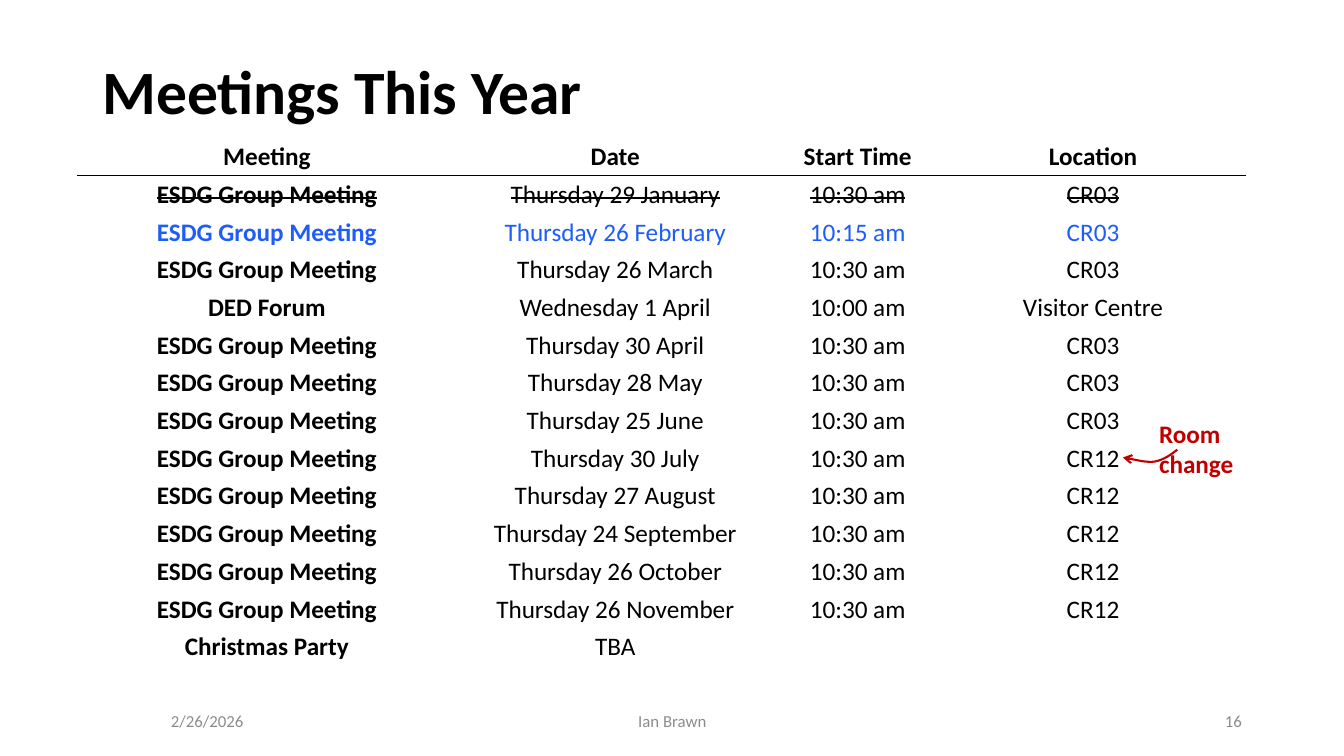
from dataclasses import dataclass

from lxml import etree
from pptx import Presentation
from pptx import util as u
from pptx.dml.color import RGBColor
from pptx.enum import text
from pptx.oxml import ns

Cm = u.Cm
LEFT, CENTRE, RIGHT = text.PP_ALIGN.LEFT, text.PP_ALIGN.CENTER, text.PP_ALIGN.RIGHT


@dataclass(frozen=True)
class Theme:
    font: str = "Calibri"
    ink: str = "000000"
    current: str = "1E5DF8"
    alert: str = "C00000"
    muted: str = "8C8C8C"
    title_size: int = 44
    body_size: int = 18
    footer_size: int = 12


THEME = Theme()
GROUP = "ESDG Group Meeting"
HEADINGS = ("Meeting", "Date", "Start Time", "Location")
MEETINGS = (
    (GROUP, "Thursday 29 January", "10:30 am", "CR03"),
    (GROUP, "Thursday 26 February", "10:15 am", "CR03"),
    (GROUP, "Thursday 26 March", "10:30 am", "CR03"),
    ("DED Forum", "Wednesday 1 April", "10:00 am", "Visitor Centre"),
    (GROUP, "Thursday 30 April", "10:30 am", "CR03"),
    (GROUP, "Thursday 28 May", "10:30 am", "CR03"),
    (GROUP, "Thursday 25 June", "10:30 am", "CR03"),
    (GROUP, "Thursday 30 July", "10:30 am", "CR12"),
    (GROUP, "Thursday 27 August", "10:30 am", "CR12"),
    (GROUP, "Thursday 24 September", "10:30 am", "CR12"),
    (GROUP, "Thursday 26 October", "10:30 am", "CR12"),
    (GROUP, "Thursday 26 November", "10:30 am", "CR12"),
    ("Christmas Party", "TBA", "", ""),
)
PAST_ROW, CURRENT_ROW = 1, 2
COLUMN_WIDTHS = (9.53, 8.03, 4.19, 7.67)
ROW_HEIGHT = 0.95


def add_span(para, words, size, colour, bold=False, align=LEFT):
    para.alignment = align
    span = para.add_run()
    span.text = words
    span.font.name = THEME.font
    span.font.size = u.Pt(size)
    span.font.bold = bold
    span.font.color.rgb = RGBColor.from_string(colour)
    return span


def add_label(page, box, words, size, colour, bold=False, align=LEFT,
              anchor=text.MSO_ANCHOR.MIDDLE):
    frame = page.shapes.add_textbox(*map(Cm, box)).text_frame
    frame.word_wrap = True
    frame.vertical_anchor = anchor
    add_span(frame.paragraphs[0], words, size, colour, bold, align)
    return frame


def add_rule(cell, side):
    """Draw a thin border on one side ("lnT" or "lnB") of a cell."""
    line = etree.Element(ns.qn("a:" + side), w=str(u.Pt(1)))
    fill = etree.SubElement(line, ns.qn("a:solidFill"))
    etree.SubElement(fill, ns.qn("a:srgbClr"), val=THEME.ink)
    cell._tc.get_or_add_tcPr().insert(0, line)


def add_title(page, box):
    frame = add_label(page, box, "Meetings This Year", THEME.title_size, THEME.ink, bold=True)
    frame.paragraphs[0].line_spacing = 0.9


def add_schedule(page, box):
    rows = (HEADINGS, *MEETINGS)
    table = page.shapes.add_table(len(rows), len(HEADINGS), *map(Cm, box)).table
    table.first_row = table.horz_banding = False
    for column, width in zip(table.columns, COLUMN_WIDTHS):
        column.width = Cm(width)
    for row_no, row in enumerate(rows):
        table.rows[row_no].height = Cm(ROW_HEIGHT)
        colour = THEME.current if row_no == CURRENT_ROW else THEME.ink
        for column_no, words in enumerate(row):
            cell = table.cell(row_no, column_no)
            cell.fill.background()
            cell.vertical_anchor = text.MSO_ANCHOR.MIDDLE
            cell.margin_left = cell.margin_right = Cm(0.08)
            cell.margin_top = cell.margin_bottom = Cm(0.08)
            if row_no < 2:
                add_rule(cell, ("lnB", "lnT")[row_no])
            if words:
                span = add_span(cell.text_frame.paragraphs[0], words, THEME.body_size, colour,
                                bold=row_no == 0 or column_no == 0, align=CENTRE)
                if row_no == PAST_ROW:
                    span._r.get_or_add_rPr().set("strike", "sngStrike")


def add_curved_arrow(page, start, curves):
    """Draw an arrow through cubic curves, each given as two controls and an end."""
    builder = page.shapes.build_freeform(*map(Cm, start))
    builder.add_line_segments([tuple(map(Cm, curve[2])) for curve in curves], close=False)
    arrow = builder.convert_to_shape()
    arrow.shadow.inherit = False
    arrow.fill.background()
    arrow.line.color.rgb = RGBColor.from_string(THEME.alert)
    arrow.line.width = u.Pt(1.5)
    segments = list(arrow._element.iter(ns.qn("a:lnTo")))
    for segment, curve in zip(segments, curves):
        segment.tag = ns.qn("a:cubicBezTo")
        for place, (x, y) in enumerate(curve[:2]):
            point = etree.Element(ns.qn("a:pt"), x=str(Cm(x) - arrow.left),
                                  y=str(Cm(y) - arrow.top))
            segment.insert(place, point)
    etree.SubElement(arrow.line._get_or_add_ln(), ns.qn("a:tailEnd"), type="arrow")


def add_room_note(page, box):
    frame = add_label(page, box, "Room change", THEME.body_size, THEME.alert, bold=True,
                      anchor=text.MSO_ANCHOR.TOP)
    frame.margin_right = Cm(1.4)
    left, top = box[:2]

    def place(x, y):
        return left + x, top + y

    add_curved_arrow(page, place(0.71, 0.92), (
        (place(0.55, 1.05), place(0.38, 1.17), place(0.15, 1.22)),
        (place(-0.05, 1.25), place(-0.36, 1.17), place(-0.66, 1.12)),
    ))


def add_footer(page, box):
    left, top, _, height = box
    parts = (
        (0, 5.89, "2/26/2026", LEFT),
        (7.17, 11.43, "Ian Brawn", CENTRE),
        (19.87, 7.62, "16", RIGHT),
    )
    for offset, width, words, align in parts:
        add_label(page, (left + offset, top, width, height), words,
                  THEME.footer_size, THEME.muted, align=align)


def main():
    deck = Presentation()
    deck.slide_width, deck.slide_height = Cm(33.87), Cm(19.05)
    page = deck.slides.add_slide(deck.slide_layouts[6])
    add_title(page, (2.33, 1.02, 29.21, 2.74))
    add_schedule(page, (1.96, 3.48, sum(COLUMN_WIDTHS), ROW_HEIGHT * (len(MEETINGS) + 1)))
    add_room_note(page, (28.96, 10.41, 4.01, 1.02))
    add_footer(page, (4.06, 17.65, 27.49, 1.02))
    deck.save("out.pptx")


if __name__ == "__main__":
    main()
